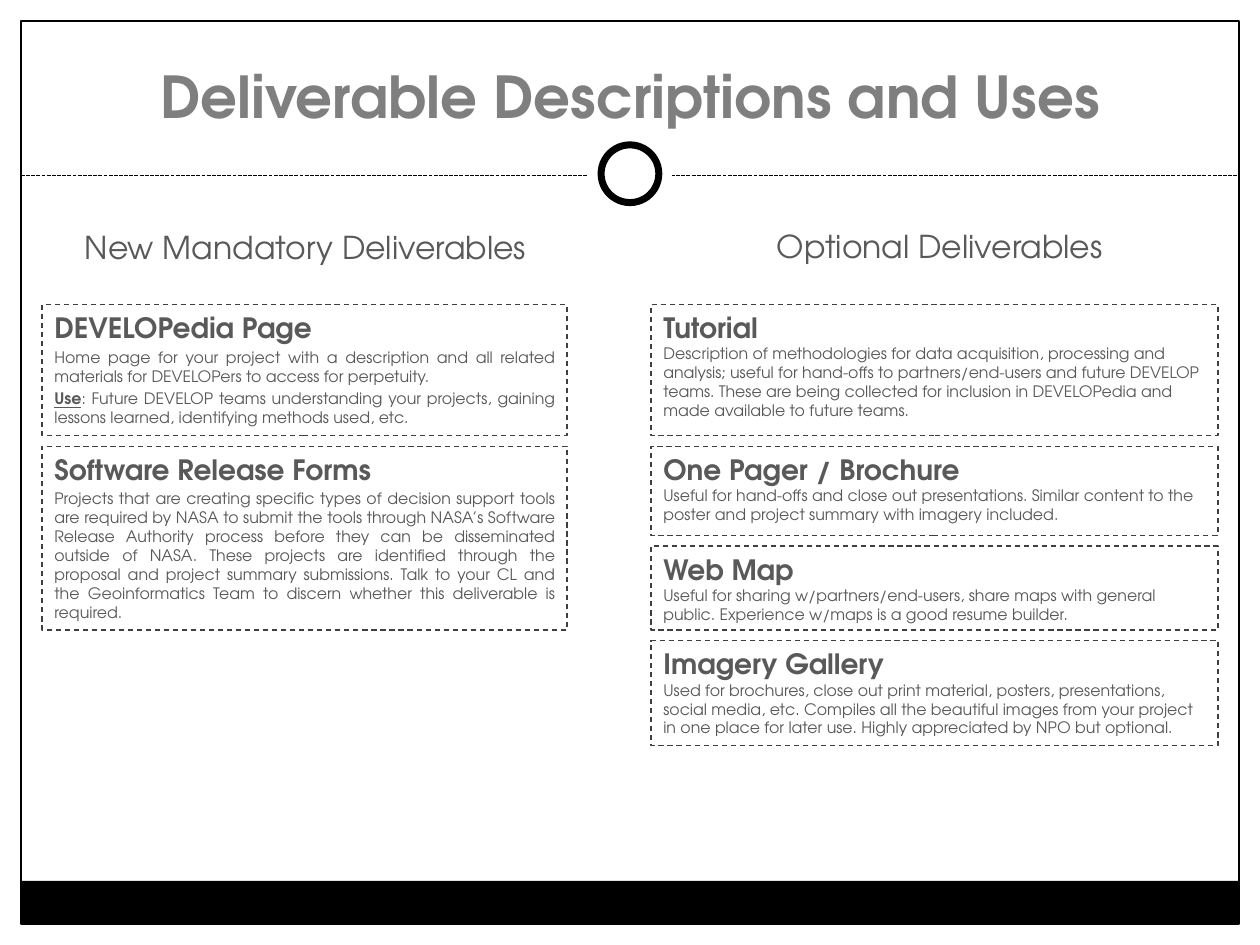
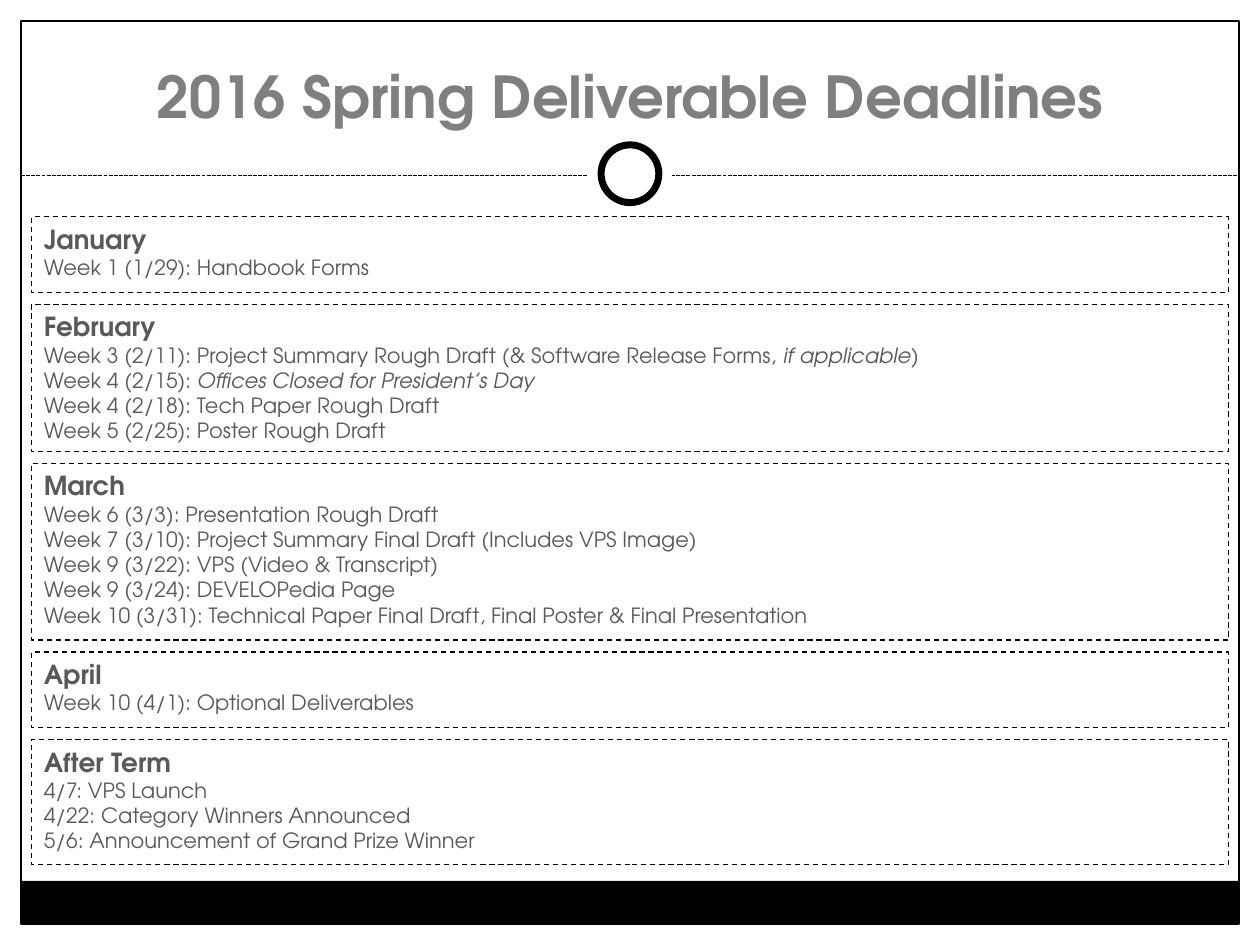
"""Build two slides on project deliverables and their deadlines."""
from dataclasses import dataclass
from typing import NamedTuple

from pptx import Presentation
from pptx.dml.color import RGBColor
from pptx.enum.dml import MSO_LINE as Dash
from pptx.enum.shapes import MSO_CONNECTOR as Link, MSO_SHAPE as Form
from pptx.enum.text import MSO_ANCHOR as Anchor, PP_ALIGN as Align
from pptx.oxml.ns import qn
from pptx.util import Inches, Pt

BLACK = RGBColor(0x00, 0x00, 0x00)
WHITE = RGBColor(0xFF, 0xFF, 0xFF)
DARK = RGBColor(0x3F, 0x3F, 0x3F)
GRAY = RGBColor(0x59, 0x59, 0x59)
PALE = RGBColor(0x7F, 0x7F, 0x7F)
FONT = "TeX Gyre Adventor"
WIDE, HIGH = Inches(10), Inches(7.5)
COLS, ROWS = 120, 90
EDGE = 2
RULE = 16.75


class Area(NamedTuple):
    """Place on the grid, in columns and rows."""
    col: float
    row: float
    wide: float
    high: float


class Run(NamedTuple):
    """Piece of text with its own style."""
    text: str
    bold: bool = False
    slant: bool = False
    under: bool = False


@dataclass(frozen=True)
class Card:
    """Dashed box with a head and lines of text."""
    head: str
    lines: list[str | list[Run]]
    high: float


@dataclass(frozen=True)
class Stack:
    """Column of cards with equal gaps."""
    col: float
    row: float
    wide: float
    gap: float
    cards: list[Card]
    ink: RGBColor
    head: float
    body: float
    align: Align = Align.LEFT
    space: float = 0


LEFT = Stack(4, 29, 50, 1, [
    Card("DEVELOPedia Page", [
        "Home page for your project with a description and all related materials "
        "for DEVELOPers to access for perpetuity.",
        [Run("Use", bold=True, under=True),
         Run(": Future DEVELOP teams understanding your projects, gaining lessons "
             "learned, identifying methods used, etc.")],
    ], 12.5),
    Card("Software Release Forms", [
        "Projects that are creating specific types of decision support tools are "
        "required by NASA to submit the tools through NASA’s Software Release "
        "Authority process before they can be disseminated outside of NASA. These "
        "projects are identified through the proposal and project summary "
        "submissions. Talk to your CL and the Geoinformatics Team to discern "
        "whether this deliverable is required.",
    ], 17.5),
], DARK, 16, 9, Align.JUSTIFY, 1.8)

RIGHT = Stack(62, 29, 54, 1, [
    Card("Tutorial", [
        "Description of methodologies for data acquisition, processing and "
        "analysis; useful for hand-offs to partners/end-users and future DEVELOP "
        "teams. These are being collected for inclusion in DEVELOPedia and made "
        "available to future teams.",
    ], 12.5),
    Card("One Pager / Brochure", [
        "Useful for hand-offs and close out presentations. Similar content to the "
        "poster and project summary with imagery included.",
    ], 8.5),
    Card("Web Map", [
        "Useful for sharing w/partners/end-users, share maps with general public. "
        "Experience w/maps is a good resume builder.",
    ], 8),
    Card("Imagery Gallery", [
        "Used for brochures, close out print material, posters, presentations, "
        "social media, etc. Compiles all the beautiful images from your project in "
        "one place for later use. Highly appreciated by NPO but optional.",
    ], 10),
], DARK, 16, 9)

MONTHS = Stack(3, 20.65, 114, 1.15, [
    Card("January", ["Week 1 (1/29): Handbook Forms"], 7.2),
    Card("February", [
        [Run("Week 3 (2/11): Project Summary Rough Draft (& Software Release Forms, "),
         Run("if applicable", slant=True), Run(")")],
        [Run("Week 4 (2/15): "), Run("Offices Closed for President’s Day", slant=True)],
        "Week 4 (2/18): Tech Paper Rough Draft",
        "Week 5 (2/25): Poster Rough Draft",
    ], 14),
    Card("March", [
        "Week 6 (3/3): Presentation Rough Draft",
        "Week 7 (3/10): Project Summary Final Draft (Includes VPS Image)",
        "Week 9 (3/22): VPS (Video & Transcript)",
        "Week 9 (3/24): DEVELOPedia Page",
        "Week 10 (3/31): Technical Paper Final Draft, Final Poster & Final Presentation",
    ], 16.8),
    Card("April", ["Week 10 (4/1): Optional Deliverables"], 7.2),
    Card("After Term", [
        "4/7: VPS Launch",
        "4/22: Category Winners Announced",
        "5/6: Announcement of Grand Prize Winner",
    ], 11.9),
], BLACK, 15, 12)


def across(cols: float) -> int:
    """Turn columns into a length."""
    return round(WIDE * cols / COLS)


def down(rows: float) -> int:
    """Turn rows into a length."""
    return round(HIGH * rows / ROWS)


def place(area: Area) -> tuple[int, int, int, int]:
    """Turn a grid area into slide lengths."""
    return across(area.col), down(area.row), across(area.wide), down(area.high)


def write(para, text: str | list[Run], *, size: float, color: RGBColor = GRAY,
          bold: bool = False, align: Align = Align.LEFT, space: float = 0) -> None:
    """Fill a paragraph with text in the given format."""
    para.alignment = align
    if space:
        para.space_before = Pt(space)
    for part in [Run(text, bold)] if isinstance(text, str) else text:
        run = para.add_run()
        run.text = part.text
        font = run.font
        font.name, font.size, font.bold = FONT, Pt(size), part.bold
        font.italic, font.underline = part.slant, part.under
        font.color.rgb = color


def draw(slide, form: Form, area: Area, *, fill: RGBColor | None = None,
         line: RGBColor | None = None, thick: float = 0.75, dash: Dash | None = None):
    """Add a plain shape."""
    shape = slide.shapes.add_shape(form, *place(area))
    shape.shadow.inherit = False
    if fill is None:
        shape.fill.background()
    else:
        shape.fill.solid()
        shape.fill.fore_color.rgb = fill
    if line is None:
        shape.line.fill.background()
    else:
        shape.line.color.rgb = line
        shape.line.width = Pt(thick)
        if dash is not None:
            shape.line.dash_style = dash
    return shape


def label(slide, text: str, area: Area, *, anchor: Anchor = Anchor.TOP,
          wrap: bool = False, **style) -> None:
    """Add a centred line of text."""
    frame = slide.shapes.add_textbox(*place(area)).text_frame
    frame.word_wrap, frame.vertical_anchor = wrap, anchor
    write(frame.paragraphs[0], text, align=Align.CENTER, **style)


def ring(slide, size: float, **style) -> None:
    """Add a circle at the middle of the rule."""
    area = Area((COLS - size) / 2, 16.55 - size / 2, size, size)
    draw(slide, Form.OVAL, area, fill=WHITE, **style)


def start(deck, title: str):
    """Add a slide with the shared frame, rule, ring and title."""
    slide = deck.slides.add_slide(deck.slide_layouts[6])
    inner = COLS - 2 * EDGE
    draw(slide, Form.RECTANGLE, Area(EDGE, 83.9, inner, 4.1), fill=BLACK)
    draw(slide, Form.RECTANGLE, Area(EDGE, EDGE, inner, ROWS - 2 * EDGE), line=BLACK)
    rule = slide.shapes.add_connector(Link.STRAIGHT, across(EDGE), down(RULE),
                                      across(COLS - EDGE), down(RULE))
    rule.line.color.rgb, rule.line.width = BLACK, Pt(0.75)
    rule.line.dash_style = Dash.SQUARE_DOT
    props = rule.element.spPr
    props.append(props.makeelement(qn("a:effectLst"), {}))
    ring(slide, 8)
    ring(slide, 5.5, line=BLACK, thick=4)
    label(slide, title, Area(4, 3, 112, 10), anchor=Anchor.BOTTOM, wrap=True,
          size=33, color=PALE, bold=True)
    return slide


def pile(slide, stack: Stack) -> None:
    """Draw the cards of a stack from top to bottom."""
    row = stack.row
    for card in stack.cards:
        area = Area(stack.col, row, stack.wide, card.high)
        box = draw(slide, Form.RECTANGLE, area, line=stack.ink, dash=Dash.DASH)
        frame = box.text_frame
        frame.word_wrap, frame.vertical_anchor = True, Anchor.TOP
        write(frame.paragraphs[0], card.head, size=stack.head, bold=True)
        for text in card.lines:
            write(frame.add_paragraph(), text, size=stack.body,
                  align=stack.align, space=stack.space)
        row += card.high + stack.gap


def main() -> None:
    """Build and save the deck."""
    deck = Presentation()
    deck.slide_width, deck.slide_height = WIDE, HIGH

    uses = start(deck, "Deliverable Descriptions and Uses")
    label(uses, "New Mandatory Deliverables", Area(6.6, 21.1, 45, 4.8), size=18)
    label(uses, "Optional Deliverables", Area(67, 21, 45, 4.8), size=18)
    pile(uses, LEFT)
    pile(uses, RIGHT)

    dates = start(deck, "2016 Spring Deliverable Deadlines")
    pile(dates, MONTHS)
    deck.save("out.pptx")


if __name__ == "__main__":
    main()
